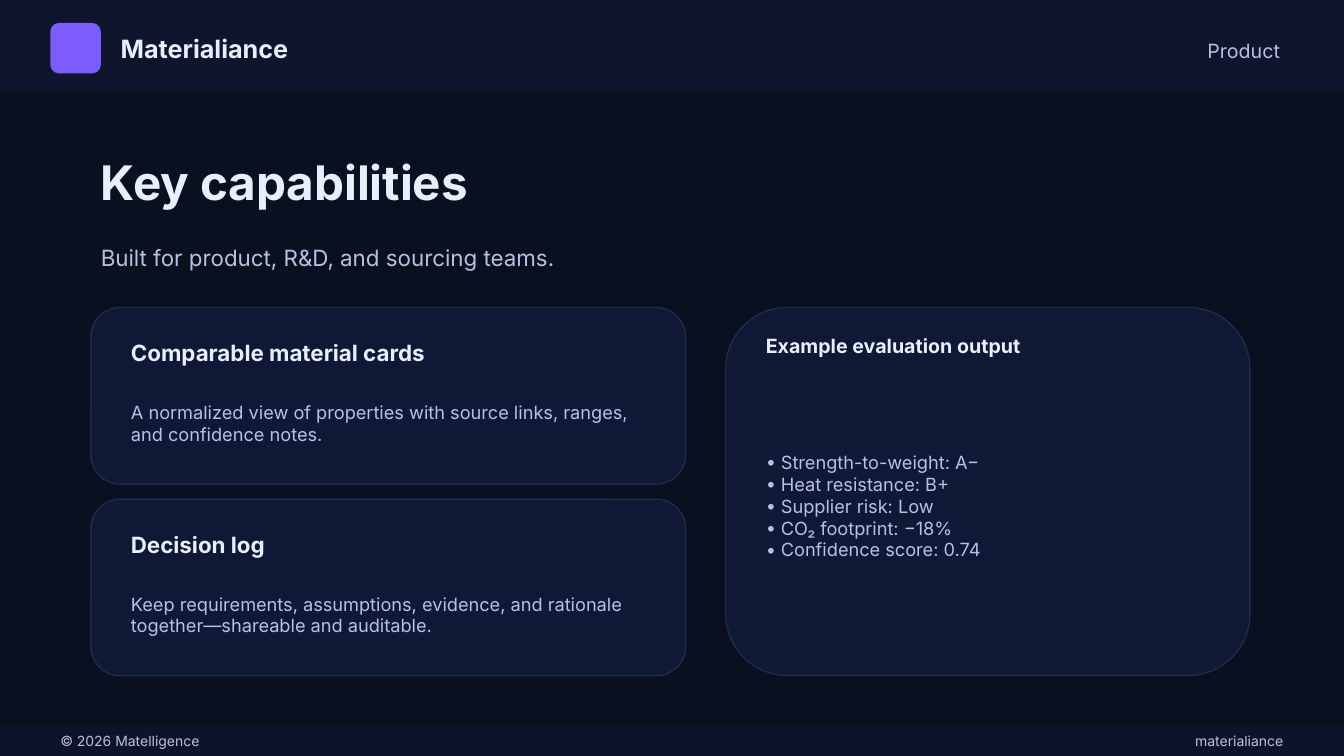
"""Build the "Key capabilities" product slide."""
from lxml.etree import SubElement
from pptx import Presentation
from pptx.dml.color import RGBColor
from pptx.enum.shapes import MSO_SHAPE
from pptx.enum.text import MSO_ANCHOR, PP_ALIGN
from pptx.oxml.ns import qn
from pptx.util import Cm, Pt

BACKGROUND, BAND, CARD, BORDER = "0B1020", "0F1730", "101A38", "2A345B"
ACCENT, BRIGHT, MUTED = "7C5CFF", "E9EEFC", "B7C2E3"
RIGHT = PP_ALIGN.RIGHT


def add_panel(kind, left, top, width, height, color, opacity=100, border=None):
    """Add a filled shape, optionally translucent and bordered."""
    shape = slide.shapes.add_shape(kind, Cm(left), Cm(top), Cm(width), Cm(height))
    shape.shadow.inherit = False
    shape.fill.solid()
    shape.fill.fore_color.rgb = RGBColor.from_string(color)
    opacities = [opacity]
    if border:
        shape.line.color.rgb = RGBColor.from_string(border)
        shape.line.width = Pt(1)
        opacities.append(70)
    else:
        shape.line.fill.background()
    colors = list(shape._element.spPr.iter(qn("a:srgbClr")))
    for element, percent in zip(colors, opacities):
        if percent < 100:
            SubElement(element, qn("a:alpha"), val=str(percent * 1000))


def add_text(lines, left, top, width, height, size, color,
             bold=False, align=PP_ALIGN.LEFT, bullets=False):
    """Add a vertically centred text box with one paragraph per line."""
    box = slide.shapes.add_textbox(Cm(left), Cm(top), Cm(width), Cm(height))
    frame = box.text_frame
    frame.word_wrap = True
    frame.vertical_anchor = MSO_ANCHOR.MIDDLE
    for index, line in enumerate(lines):
        paragraph = frame.add_paragraph() if index else frame.paragraphs[0]
        paragraph.alignment = align
        if bullets:
            properties = paragraph._p.get_or_add_pPr()
            properties.set("marL", str(Cm(0.38)))
            properties.set("indent", str(-Cm(0.38)))
            SubElement(properties, qn("a:buFont"), typeface="Inter")
            SubElement(properties, qn("a:buChar"), char="•")
        run = paragraph.add_run()
        run.text = line
        run.font.name = "Inter"
        run.font.size = Pt(size)
        run.font.bold = bold
        run.font.color.rgb = RGBColor.from_string(color)


presentation = Presentation()
presentation.slide_width = Cm(33.87)
presentation.slide_height = Cm(19.05)
slide = presentation.slides.add_slide(presentation.slide_layouts[6])
slide.background.fill.solid()
slide.background.fill.fore_color.rgb = RGBColor.from_string(BACKGROUND)

add_panel(MSO_SHAPE.RECTANGLE, 0, 0, 33.87, 2.29, BAND, 85)
add_panel(MSO_SHAPE.ROUNDED_RECTANGLE, 1.27, 0.58, 1.27, 1.27, ACCENT)
add_text(["Materialiance"], 2.79, 0.71, 15.24, 1.02, 18, BRIGHT, bold=True)
add_text(["Product"], 18.54, 0.76, 13.97, 1.02, 14, MUTED, align=RIGHT)

add_text(["Key capabilities"], 2.29, 3.56, 29.46, 2.03, 34, BRIGHT, bold=True)
add_text(["Built for product, R&D, and sourcing teams."],
         2.29, 5.72, 28.45, 1.52, 16, MUTED)

cards_top = 7.75
capabilities = [
    ("Comparable material cards",
     "A normalized view of properties with source links, ranges, "
     "and confidence notes."),
    ("Decision log",
     "Keep requirements, assumptions, evidence, and rationale "
     "together—shareable and auditable."),
]
for index, (title, description) in enumerate(capabilities):
    top = cards_top + index * 4.83
    add_panel(MSO_SHAPE.ROUNDED_RECTANGLE, 2.29, top, 14.99, 4.45, CARD, 90, BORDER)
    add_text([title], 3.05, top + 0.63, 13.46, 1.02, 16, BRIGHT, bold=True)
    add_text([description], 3.05, top + 1.83, 13.46, 2.16, 13, MUTED)

evaluation = [
    "Strength-to-weight: A−",
    "Heat resistance: B+",
    "Supplier risk: Low",
    "CO₂ footprint: −18%",
    "Confidence score: 0.74",
]
add_panel(MSO_SHAPE.ROUNDED_RECTANGLE, 18.29, cards_top, 13.21, 9.27, CARD, 90, BORDER)
add_text(["Example evaluation output"], 19.05, cards_top + 0.51, 11.68, 0.89,
         14, BRIGHT, bold=True)
add_text(evaluation, 19.05, cards_top + 1.7, 11.68, 6.6, 13, MUTED, bullets=True)

add_panel(MSO_SHAPE.RECTANGLE, 0, 18.29, 33.87, 0.76, BAND, 65)
add_text(["© 2026 Matelligence"], 1.27, 18.29, 15.24, 0.76, 10, MUTED)
add_text(["materialiance"], 17.78, 18.29, 14.81, 0.76, 10, MUTED, align=RIGHT)

presentation.save("out.pptx")
